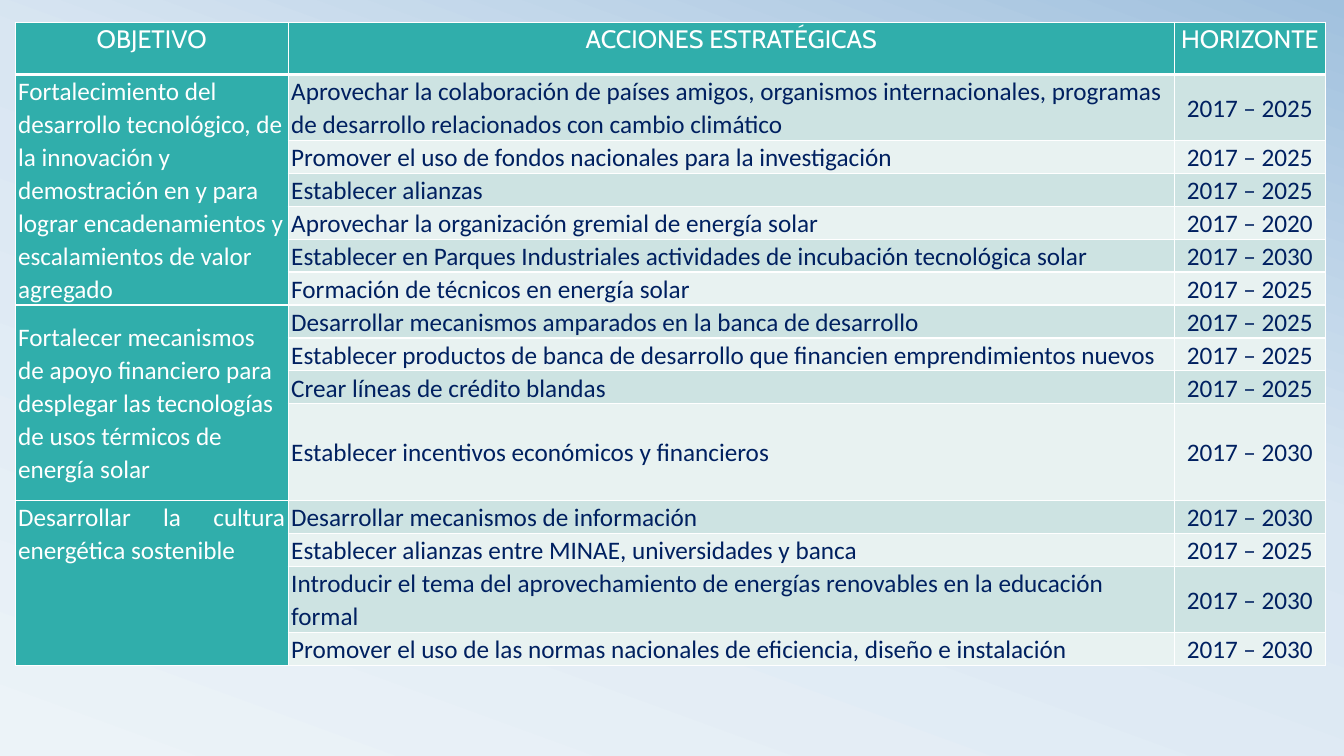
from copy import deepcopy

from lxml import etree
from pptx import Presentation
from pptx.dml.color import RGBColor
from pptx.enum.text import MSO_ANCHOR, PP_ALIGN
from pptx.oxml.ns import qn
from pptx.util import Pt

LEFT, CENTER, JUSTIFY = PP_ALIGN.LEFT, PP_ALIGN.CENTER, PP_ALIGN.JUSTIFY
TOP, MIDDLE = MSO_ANCHOR.TOP, MSO_ANCHOR.MIDDLE

# Content: objective, its alignment, anchors of objective and actions, actions
# Each action: text, horizon, height in text lines
HEADERS = ["OBJETIVO", "ACCIONES ESTRATÉGICAS", "HORIZONTE"]
OBJECTIVES = [
    ("Fortalecimiento del desarrollo tecnológico, de la innovación y demostración en y para "
     "lograr encadenamientos y escalamientos de valor agregado", LEFT, MIDDLE, MIDDLE, [
         ("Aprovechar la colaboración de países amigos, organismos internacionales, programas "
          "de desarrollo relacionados con cambio climático", "2017 – 2025", 2),
         ("Promover el uso de fondos nacionales para la investigación", "2017 – 2025", 1),
         ("Establecer alianzas", "2017 – 2025", 1),
         ("Aprovechar la organización gremial de energía solar", "2017 – 2020", 1),
         ("Establecer en Parques Industriales actividades de incubación tecnológica solar",
          "2017 – 2030", 1),
         ("Formación de técnicos en energía solar", "2017 – 2025", 1),
     ]),
    ("Fortalecer mecanismos de apoyo financiero para desplegar las tecnologías de usos "
     "térmicos de energía solar", LEFT, MIDDLE, MIDDLE, [
         ("Desarrollar mecanismos amparados en la banca de desarrollo", "2017 – 2025", 1),
         ("Establecer productos de banca de desarrollo que financien emprendimientos nuevos",
          "2017 – 2025", 1),
         ("Crear líneas de crédito blandas", "2017 – 2025", 1),
         ("Establecer incentivos económicos y financieros", "2017 – 2030", 3),
     ]),
    ("Desarrollar la cultura energética sostenible", JUSTIFY, TOP, TOP, [
        ("Desarrollar mecanismos de información", "2017 – 2030", 1),
        ("Establecer alianzas entre MINAE, universidades y banca", "2017 – 2025", 1),
        ("Introducir el tema del aprovechamiento de energías renovables en la educación formal",
         "2017 – 2030", 2),
        ("Promover el uso de las normas nacionales de eficiencia, diseño e instalación",
         "2017 – 2030", 1),
    ]),
]

# Look
WHITE, NAVY, TEAL = "FFFFFF", "002060", "30AEAB"
BANDS = ["CDE3E2", "E8F2F1"]
BACKGROUND = [(0, "ECF3F8"), (0.58, "D9E6F2"), (1, "A1C1DE")]
TABLE_LEFT, TABLE_TOP = 10.8, 15.8
COLUMN_WIDTHS = [195.1, 632.9, 108]
HEADER_HEIGHT, LINE_HEIGHT = 37.4, 23.08
SIDE_MARGIN = 2.16


def color(value):
    return RGBColor.from_string(value)


def add_borders(cell, bottom_width):
    properties = cell._tc.get_or_add_tcPr()
    for side, width in (("L", 1), ("R", 1), ("T", 1), ("B", bottom_width)):
        line = etree.SubElement(properties, qn(f"a:ln{side}"), w=str(Pt(width)))
        solid = etree.SubElement(line, qn("a:solidFill"))
        etree.SubElement(solid, qn("a:srgbClr"), val=WHITE)


def format_cell(cell, text, fill, font_color, alignment, anchor, font="Calibri", bottom_width=1):
    add_borders(cell, bottom_width)
    cell.fill.solid()
    cell.fill.fore_color.rgb = color(fill)
    cell.margin_left = cell.margin_right = Pt(SIDE_MARGIN)
    cell.margin_top = cell.margin_bottom = 0
    cell.vertical_anchor = anchor
    cell.text_frame.text = text
    paragraph = cell.text_frame.paragraphs[0]
    paragraph.alignment = alignment
    paragraph.line_spacing = 1.07
    paragraph.font.size = Pt(18)
    for run in paragraph.runs:
        run.font.size = Pt(18)
        run.font.name = font
        run.font.bold = False
        run.font.color.rgb = color(font_color)


def set_background(slide):
    fill = slide.background.fill
    fill.gradient()
    fill.gradient_angle = 70
    stop_list = slide.element.find(".//" + qn("a:gsLst"))
    stop_list.append(deepcopy(stop_list[0]))
    for stop, (position, value) in zip(fill.gradient_stops, BACKGROUND):
        stop.position = position
        stop.color.rgb = color(value)


def add_plan_table(slide):
    heights = [HEADER_HEIGHT] + [
        lines * LINE_HEIGHT for *_, actions in OBJECTIVES for _, _, lines in actions]
    table = slide.shapes.add_table(
        len(heights), len(HEADERS), Pt(TABLE_LEFT), Pt(TABLE_TOP),
        Pt(sum(COLUMN_WIDTHS)), Pt(sum(heights))).table
    for column, width in zip(table.columns, COLUMN_WIDTHS):
        column.width = Pt(width)
    for row, height in zip(table.rows, heights):
        row.height = Pt(height)

    # Header row
    for column, header in enumerate(HEADERS):
        format_cell(table.cell(0, column), header, TEAL, WHITE, CENTER, TOP, "Cabin", 3)

    # One merged objective beside its banded actions
    row = 1
    for objective, alignment, anchor, action_anchor, actions in OBJECTIVES:
        first_row = row
        for action, horizon, _ in actions:
            band = BANDS[(row - 1) % 2]
            label = objective if row == first_row else ""
            format_cell(table.cell(row, 0), label, TEAL, WHITE, alignment, anchor)
            format_cell(table.cell(row, 1), action, band, NAVY, LEFT, action_anchor)
            format_cell(table.cell(row, 2), horizon, band, NAVY, CENTER, MIDDLE)
            row += 1
        table.cell(first_row, 0).merge(table.cell(row - 1, 0))


def main():
    presentation = Presentation()
    presentation.slide_width, presentation.slide_height = Pt(960), Pt(540)
    slide = presentation.slides.add_slide(presentation.slide_layouts[6])
    set_background(slide)
    add_plan_table(slide)
    presentation.save("out.pptx")


if __name__ == "__main__":
    main()
